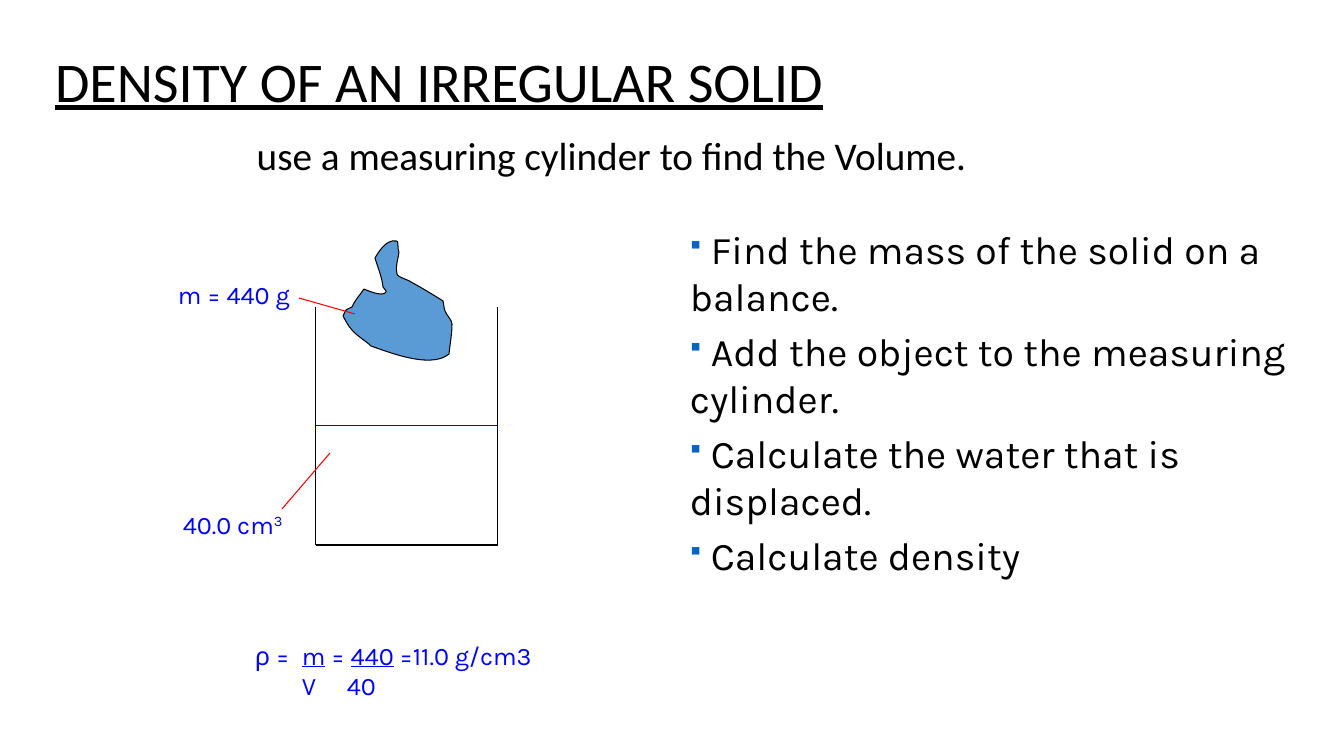
"""Build the slide on finding the density of an irregular solid."""
import lxml.etree
import pptx
import pptx.dml.color
import pptx.enum.shapes
import pptx.enum.text
import pptx.oxml.ns
import pptx.util

PX = 914400 / 100.8
COLORS = {"black": "000000", "blue": "0000FF", "red": "FF0000",
          "solid": "5B9BD5", "bullet": "0563C1"}
qn = pptx.oxml.ns.qn
ANCHOR = pptx.enum.text.MSO_ANCHOR


def px(length):
    return pptx.util.Emu(round(length * PX))


def write_text(shape, paragraphs, font="Karla", size=18, color="blue", before=0,
               spacing=None, anchor=ANCHOR.TOP, wrap=True, bullet=None, tabs=()):
    frame = shape.text_frame
    frame.word_wrap = wrap
    frame.auto_size = pptx.enum.text.MSO_AUTO_SIZE.NONE
    frame.vertical_anchor = anchor
    for index, runs in enumerate(paragraphs):
        paragraph = frame.add_paragraph() if index else frame.paragraphs[0]
        paragraph.alignment = pptx.enum.text.PP_ALIGN.LEFT
        paragraph.space_before = pptx.util.Pt(before)
        if spacing:
            paragraph.line_spacing = spacing
        properties = paragraph._p.get_or_add_pPr()
        if bullet:
            bullet_color = lxml.etree.SubElement(properties, qn("a:buClr"))
            lxml.etree.SubElement(bullet_color, qn("a:srgbClr"), val=COLORS["bullet"])
            lxml.etree.SubElement(properties, qn("a:buSzPct"), val="65000")
            lxml.etree.SubElement(properties, qn("a:buFont"), typeface="Wingdings",
                                  pitchFamily="2", charset="2")
            lxml.etree.SubElement(properties, qn("a:buChar"), char=bullet)
        if tabs:
            tab_list = lxml.etree.SubElement(properties, qn("a:tabLst"))
            for position in tabs:
                lxml.etree.SubElement(tab_list, qn("a:tab"), pos=str(px(position)), algn="l")
        for text, style in runs:
            run = paragraph.add_run()
            run.text = text
            run.font.name = font
            run.font.size = pptx.util.Pt(size)
            run.font.color.rgb = pptx.dml.color.RGBColor.from_string(COLORS[color])
            run.font.underline = style == "underline"
            if style == "superscript":
                run.font._element.set("baseline", "30000")


presentation = pptx.Presentation()
presentation.slide_width, presentation.slide_height = px(1344), px(756)
slide = presentation.slides.add_slide(presentation.slide_layouts[5])
shapes = slide.shapes

title = shapes.title
title.left, title.top, title.width, title.height = map(px, (45, 11, 1159, 146))
write_text(title, [[("DENSITY OF AN IRREGULAR SOLID", "underline")]], font="Calibri",
           size=40, color="black", spacing=0.9, anchor=ANCHOR.MIDDLE)

subtitle = shapes.add_textbox(*map(px, (238, 132, 907, 75)))
write_text(subtitle, [[(" use a measuring cylinder to find the Volume.", None)]],
           font="Calibri", size=28, color="black", before=10, spacing=0.9)

left, right, rim, water, base = 316, 498, 307, 426, 545
for *ends, color in [
    (left, rim, left, base, "black"),
    (left, base, right, base, "black"),
    (right, base, right, rim, "black"),
    (left, water, right, water, "blue"),
    (355, 314, 299, 298, "red"),
    (282, 509, 330, 453, "red"),
]:
    line = shapes.add_connector(pptx.enum.shapes.MSO_CONNECTOR.STRAIGHT, *map(px, ends))
    line.line.color.rgb = pptx.dml.color.RGBColor.from_string(COLORS[color])
    line.line.width = pptx.util.Pt(0.75)
    lxml.etree.SubElement(line._element.spPr, qn("a:effectLst"))

solid_curves = [
    (346, 321, 348, 326, 352, 330), (357, 336, 366, 341, 371, 346),
    (396, 355, 432, 368, 449, 354), (450, 344, 452, 334, 452, 324),
    (452, 320, 447, 316, 445, 311), (444, 308, 443, 301, 443, 301),
    (432, 294, 422, 288, 411, 282), (409, 280, 397, 277, 397, 274),
    (395, 267, 398, 260, 399, 252), (398, 250, 398, 248, 398, 246),
    (397, 244, 399, 241, 396, 241), (386, 239, 378, 253, 375, 258),
    (378, 268, 382, 277, 383, 287), (384, 289, 387, 291, 386, 292),
    (383, 298, 364, 289, 364, 289), (360, 295, 355, 300, 352, 307),
    (344, 311, 347, 308, 343, 316),
]
builder = shapes.build_freeform(*solid_curves[-1][4:], scale=PX)
builder.add_line_segments([curve[4:] for curve in solid_curves], close=True)
solid = builder.convert_to_shape()
origin_x = min(curve[4] for curve in solid_curves)
origin_y = min(curve[5] for curve in solid_curves)
segments = list(solid._element.iter(qn("a:lnTo")))
for segment, curve in zip(segments, solid_curves):
    segment.clear()
    segment.tag = qn("a:cubicBezTo")
    for x, y in zip(curve[::2], curve[1::2]):
        lxml.etree.SubElement(segment, qn("a:pt"), x=str(x - origin_x), y=str(y - origin_y))
solid.shadow.inherit = False
solid.fill.solid()
solid.fill.fore_color.rgb = pptx.dml.color.RGBColor.from_string(COLORS["solid"])
solid.line.color.rgb = pptx.dml.color.RGBColor.from_string(COLORS["black"])
solid.line.width = pptx.util.Pt(0.75)
mass_pointer = shapes[-3]
solid._element.addnext(mass_pointer._element)

steps = shapes.add_textbox(*map(px, (680, 220, 624, 371)))
write_text(steps, [[(text, None)] for text in (
    " Find the mass of the solid on a balance.",
    " Add the object to the measuring cylinder.",
    " Calculate the water that is displaced.",
    " Calculate density",
)], size=28, color="black", before=5.6, bullet="§")

mass = shapes.add_textbox(*map(px, (168, 274, 139, 40)))
write_text(mass, [[("m = 440 g", None)]], before=9, wrap=False)

volume = shapes.add_textbox(*map(px, (173, 504, 135, 40)))
write_text(volume, [[("40.0 cm", None), ("3", "superscript")]], before=9)

formula = shapes.add_textbox(*map(px, (245, 635, 504, 71)))
write_text(formula, [
    [("ρ =\t", None), ("m", "underline"), (" = ", None), ("440", "underline"),
     (" =11.0 g/cm3", None)],
    [("\tV\t40", None)],
], tabs=(47, 92))

presentation.save("out.pptx")
